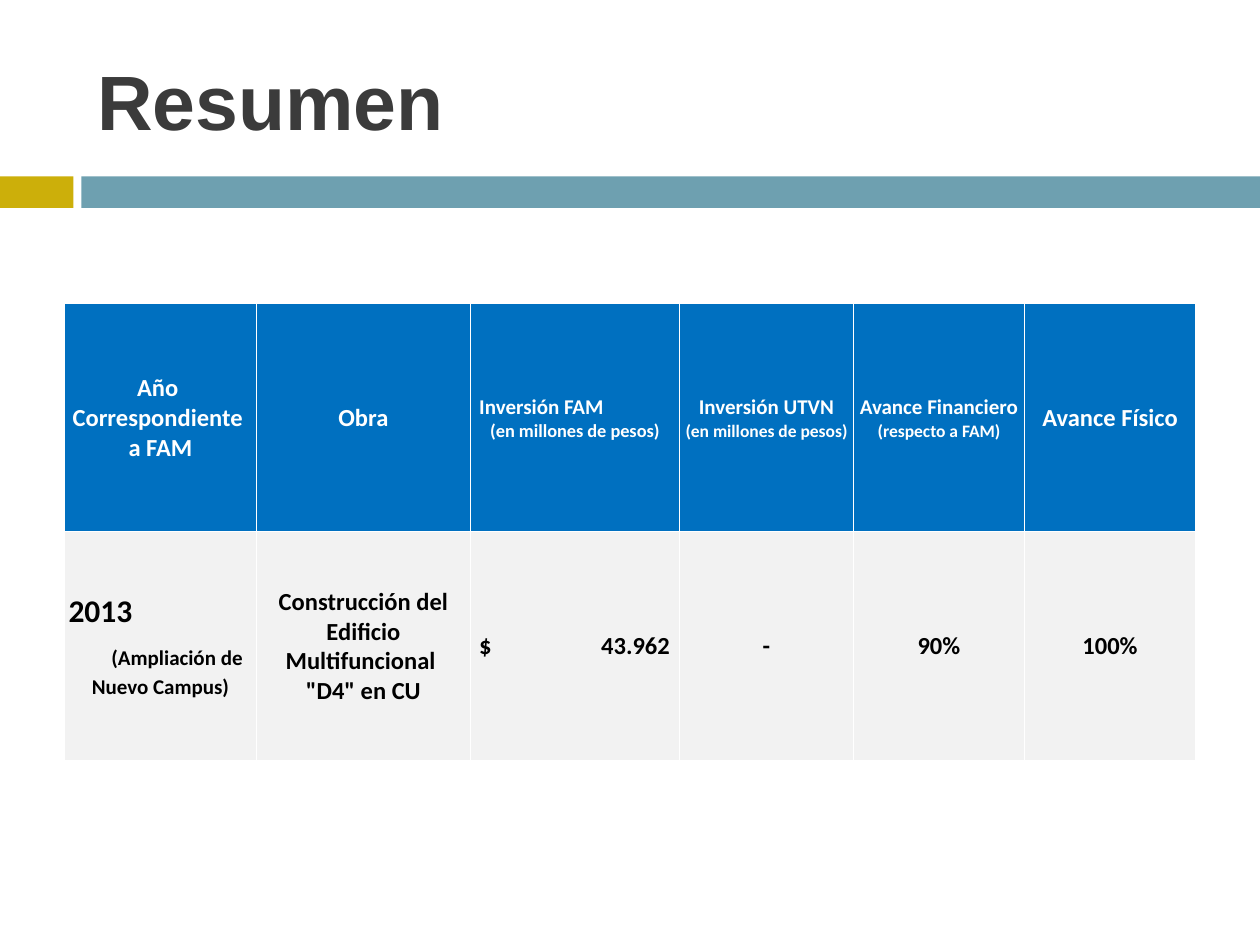
"""Build the summary slide with its table of works."""
from lxml import etree
from pptx import Presentation
from pptx.dml.color import RGBColor
from pptx.enum.shapes import MSO_SHAPE
from pptx.enum.text import MSO_ANCHOR, PP_ALIGN
from pptx.oxml import parse_xml
from pptx.oxml.ns import nsdecls, qn
from pptx.util import Pt

RECT = MSO_SHAPE.RECTANGLE
MIDDLE = MSO_ANCHOR.MIDDLE
LEFT, CENTER = PP_ALIGN.LEFT, PP_ALIGN.CENTER
WHITE, BLACK = "FFFFFF", "000000"


def color(text):
    return RGBColor.from_string(text)


def write(par, text, size, ink, face="Calibri"):
    run = par.add_run()
    run.text = text
    look = {"size": Pt(size), "bold": True, "name": face}
    for key, value in look.items():
        setattr(run.font, key, value)
    run.font.color.rgb = color(ink)


deck = Presentation()
deck.slide_width, deck.slide_height = Pt(720), Pt(540)
slide = deck.slides.add_slide(deck.slide_layouts[6])

for left, width, fill in [(0, 42, "CCAF0A"), (46.5, 673.5, "6EA0B0")]:
    bar = slide.shapes.add_shape(RECT, Pt(left), Pt(100.8), Pt(width), Pt(18))
    bar.shadow.inherit = False
    bar.fill.solid()
    bar.fill.fore_color.rgb = color(fill)
    bar.line.fill.background()

title = slide.shapes.add_textbox(Pt(48.5), Pt(18), Pt(642), Pt(78)).text_frame
title.word_wrap = True
title.vertical_anchor = MIDDLE
write(title.paragraphs[0], "Resumen", 44, "3B3B3B", "Arial")

# Each line: text, size, paragraph format, left indent
mid = {"alignment": CENTER}
start = {"alignment": LEFT}
head = [
    [("Año ", 14, mid, 0), ("Correspondiente ", 14, mid, 0), ("a FAM", 14, mid, 0)],
    [("Obra", 14, mid, 0)],
    [("Inversión FAM", 12, start, 0), ("(en millones de pesos)", 10.5, mid, 0)],
    [("Inversión UTVN", 12, mid, 0), ("(en millones de pesos)", 10, mid, 0)],
    [("Avance Financiero", 12, mid, 0), ("(respecto a FAM)", 10, mid, 0)],
    [("Avance Físico", 14, mid, 0)],
]
body = [
    [("2013", 18, start, 1.5),
     ("(Ampliación de", 12, mid | {"space_before": Pt(8)}, 19),
     ("Nuevo Campus)", 12, mid | {"space_before": Pt(2)}, 0)],
    [("Construcción del Edificio Multifuncional ", 14, mid, 0),
     ("\"D4\" en CU", 14, mid, 0)],
    [("$\t43.962", 14, start, 0)],
    [("-", 14, mid, 0)],
    [("90%", 14, mid, 0)],
    [("100%", 14, mid, 0)],
]
wide = [109.5, 122.4, 119.4, 99.4, 97.8, 97.8]
rows = [(head, "0070C0", WHITE), (body, "F2F2F2", BLACK)]

frame = slide.shapes.add_table(
    len(rows), len(wide), Pt(37), Pt(173.5), Pt(sum(wide)), Pt(260.8))
table = frame.table
for col, width in zip(table.columns, wide):
    col.width = Pt(width)

for row, (cells, fill, ink) in enumerate(rows):
    table.rows[row].height = Pt(130.4)
    for col, lines in enumerate(cells):
        cell = table.cell(row, col)
        side = Pt(5 if col == 2 else 0.7)
        look = {"margin_left": side, "margin_right": side, "margin_top": Pt(0.7),
                "margin_bottom": 0, "vertical_anchor": MIDDLE}
        for key, value in look.items():
            setattr(cell, key, value)
        props = cell._tc.get_or_add_tcPr()
        for edge in ("lnL", "lnR", "lnT", "lnB"):
            props.append(parse_xml(
                f'<a:{edge} {nsdecls("a")} w="{Pt(0.5)}"><a:solidFill>'
                f'<a:srgbClr val="{WHITE}"/></a:solidFill></a:{edge}>'))
        cell.fill.solid()
        cell.fill.fore_color.rgb = color(fill)
        for spot, (text, size, form, indent) in enumerate(lines):
            text_frame = cell.text_frame
            par = text_frame.add_paragraph() if spot else text_frame.paragraphs[0]
            for key, value in form.items():
                setattr(par, key, value)
            props = par._p.get_or_add_pPr()
            if indent:
                props.set("marL", str(Pt(indent)))
            if "\t" in text:
                tabs = etree.SubElement(props, qn("a:tabLst"))
                etree.SubElement(tabs, qn("a:tab"), pos=str(Pt(109)), algn="r")
            write(par, text, size, ink)

deck.save("out.pptx")
